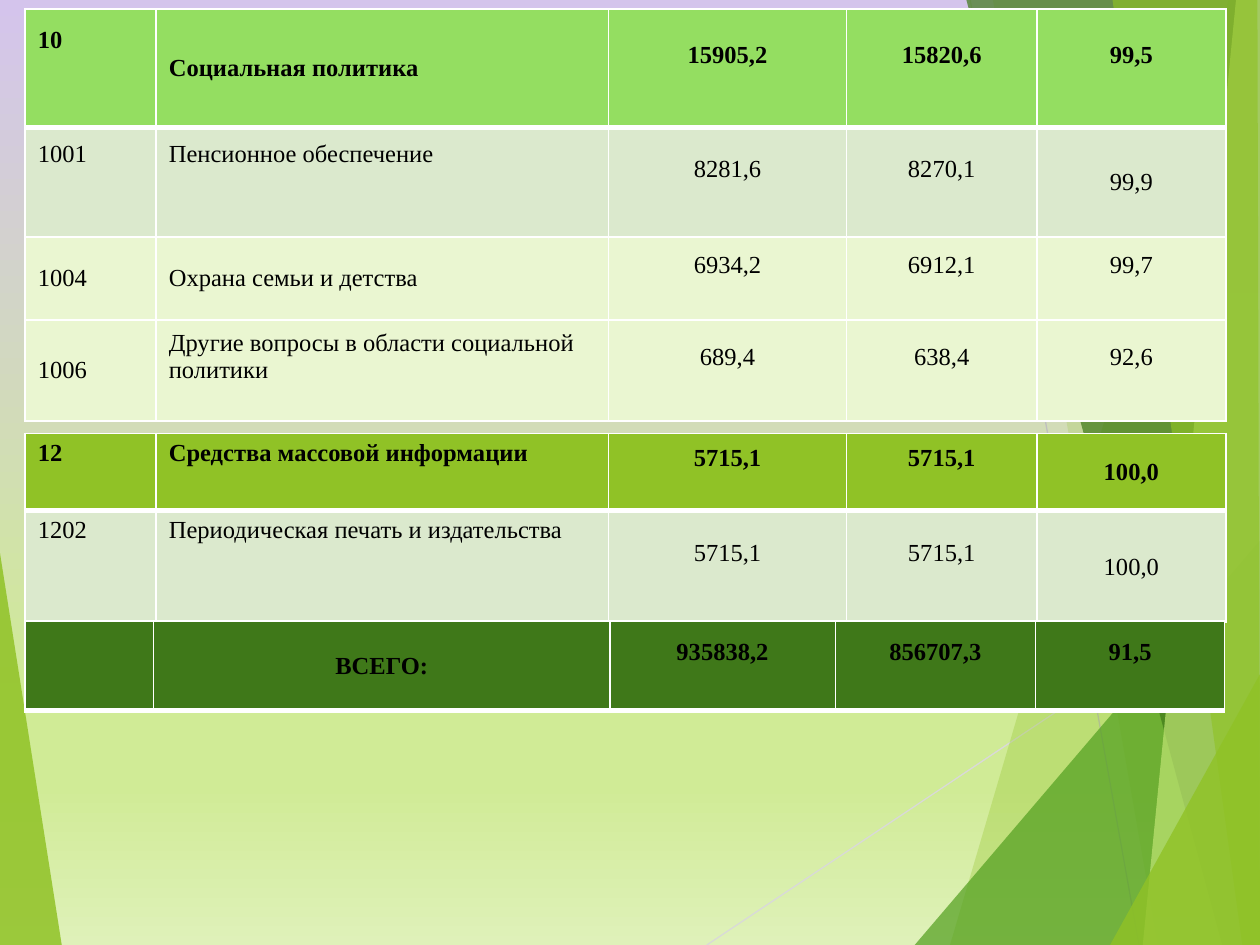
from lxml import etree
from pptx import Presentation
from pptx.dml.color import RGBColor
from pptx.enum.shapes import MSO_CONNECTOR as Connector
from pptx.enum.text import MSO_ANCHOR as Anchor, PP_ALIGN as Align
from pptx.oxml import parse_xml
from pptx.oxml.ns import nsdecls, qn
from pptx.util import Inches, Pt

FONT = "Times New Roman"
LINE_HEIGHT = 0.22
GREEN, DARK, LIME = "90C226", "3F7819", "94DE61"
SAGE, PALE = "DBE9CD", "EAF6D1"

BACKGROUND_STOPS = [(0, "D4C4EC"), (74, "D0EB96"), (83, "D0EB96"), (100, "DFF1B9")]
LEFT_WEDGE = ([(0, 4.39), (0.49, 7.5), (0, 7.5)], GREEN, 85)
RAYS = [((5.61, 7.5), (10, 4.57), "D9D9D9"), ((7.7, 0), (9.04, 7.5), "BFBFBF")]
FACETS = [
    ([(9.75, 0), (7.54, 7.5), (10, 7.5), (10, 0)], GREEN, 30),
    ([(7.88, 0), (9.19, 7.5), (10, 7.5), (10, 0)], GREEN, 20),
    ([(7.26, 7.5), (10, 4.29), (10, 7.5)], "54A021", 72),
    ([(7.67, 0), (9.7, 7.5), (10, 7.5), (10, 0)], DARK, 70),
    ([(9.81, 0), (9.07, 7.5), (10, 7.5), (10, 0)], "C0E474", 70),
    ([(8.83, 0), (9.86, 7.5), (10, 7.5), (9.98, 0)], GREEN, 65),
    ([(8.81, 7.5), (10, 5.35), (10, 7.5)], GREEN, 80),
]

# Each row: height, fill, bold, texts, lines of space kept below each text
SOCIAL_ROWS = [
    (0.94, LIME, True, ["10", "Социальная политика", "15905,2", "15820,6", "99,5"], [2, 0, 1, 1, 1]),
    (0.87, SAGE, False, ["1001", "Пенсионное обеспечение", "8281,6", "8270,1", "99,9"], [2, 2, 1, 1, 0]),
    (0.66, PALE, False, ["1004", "Охрана семьи и детства", "6934,2", "6912,1", "99,7"], [0, 0, 1, 1, 1]),
    (0.8, PALE, False, ["1006", "Другие вопросы в области социальной политики",
                        "689,4", "638,4", "92,6"], [0, 1, 1, 1, 1]),
]
MEDIA_ROWS = [
    (0.61, GREEN, True, ["12", "Средства массовой информации", "5715,1", "5715,1", "100,0"],
     [None, None, 1, 1, 0]),
    (0.89, SAGE, False, ["1202", "Периодическая печать и издательства", "5715,1", "5715,1", "100,0"],
     [None, None, 1, 1, 0]),
]
TOTAL_ROWS = [
    (0.71, DARK, True, ["", "ВСЕГО:", "935838,2", "856707,3", "91,5"], [0, 0, 1, 1, 1]),
]
WIDTHS = [1.04, 3.59, 1.89, 1.51, 1.5]
TOTAL_WIDTHS = [1.02, 3.62, 1.79, 1.59, 1.5]


def color(value):
    return RGBColor.from_string(value)


def paint_background(page):
    page.background.fill.gradient()
    gradient = page.background._cSld.find(".//" + qn("a:gradFill"))
    stops = "".join(
        f'<a:gs pos="{pos * 1000}"><a:srgbClr val="{value}"/></a:gs>'
        for pos, value in BACKGROUND_STOPS
    )
    gradient.getparent().replace(gradient, parse_xml(
        f'<a:gradFill {nsdecls("a")} rotWithShape="1"><a:gsLst>{stops}</a:gsLst>'
        '<a:lin ang="5400000" scaled="0"/></a:gradFill>'
    ))


def add_facet(page, points, fill, opacity):
    start, *rest = [(Inches(x), Inches(y)) for x, y in points]
    builder = page.shapes.build_freeform(*start)
    builder.add_line_segments(rest, close=True)
    facet = builder.convert_to_shape()
    facet.shadow.inherit = False
    facet.fill.solid()
    facet.fill.fore_color.rgb = color(fill)
    tone = facet._element.spPr.find(qn("a:solidFill"))[0]
    etree.SubElement(tone, qn("a:alpha")).set("val", str(opacity * 1000))
    facet.line.fill.background()


def add_ray(page, start, end, tone):
    ray = page.shapes.add_connector(
        Connector.STRAIGHT, *[Inches(value) for value in (*start, *end)]
    )
    ray.line.color.rgb = color(tone)
    ray.line.width = Pt(0.75)
    etree.SubElement(ray._element.spPr, qn("a:effectLst"))


def set_borders(cell, top, bottom):
    properties = cell._tc.get_or_add_tcPr()
    edges = [("lnL", 1), ("lnR", 1), ("lnT", top), ("lnB", bottom)]
    for index, (edge, width) in enumerate(edges):
        properties.insert(index, parse_xml(
            f'<a:{edge} {nsdecls("a")} w="{Pt(width)}"><a:solidFill>'
            f'<a:srgbClr val="FFFFFF"/></a:solidFill></a:{edge}>'
        ))


def fill_cell(cell, text, fill, bold, lines_below, numeric, centered):
    cell.fill.solid()
    cell.fill.fore_color.rgb = color(fill)
    cell.vertical_anchor = Anchor.TOP if lines_below is None else Anchor.MIDDLE
    cell.margin_left = cell.margin_right = Inches(0.01 if numeric else 0.1)
    cell.margin_top = Inches(0.01 if numeric else 0.05)
    cell.margin_bottom = Inches((0 if numeric else 0.05) + (lines_below or 0) * LINE_HEIGHT)
    cell.text_frame.text = text
    para = cell.text_frame.paragraphs[0]
    para.alignment = Align.CENTER if centered else Align.LEFT
    for span in para.runs:
        span.font.name = FONT
        span.font.size = Pt(14)
        span.font.bold = bold
        span.font.color.rgb = color("000000")


def add_budget_table(page, top, widths, rows, center_names=False):
    height = sum(row[0] for row in rows)
    frame = page.shapes.add_table(
        len(rows), len(widths), Inches(0.2), Inches(top), Inches(sum(widths)), Inches(height)
    )
    table = frame.table
    for column, width in zip(table.columns, widths):
        column.width = Inches(width)
    for r, (row_height, fill, bold, texts, spaces) in enumerate(rows):
        table.rows[r].height = Inches(row_height)
        for c, (text, lines_below) in enumerate(zip(texts, spaces)):
            cell = table.cell(r, c)
            numeric = c > 1
            fill_cell(cell, text, fill, bold, lines_below, numeric, numeric or center_names)
            set_borders(cell, 3 if r == 1 else 1, 3 if r == 0 else 1)


def main():
    deck = Presentation()
    deck.slide_width, deck.slide_height = Inches(10), Inches(7.5)
    page = deck.slides.add_slide(deck.slide_layouts[6])
    paint_background(page)
    add_facet(page, *LEFT_WEDGE)
    for ray in RAYS:
        add_ray(page, *ray)
    for facet in FACETS:
        add_facet(page, *facet)
    add_budget_table(page, 0.07, WIDTHS, SOCIAL_ROWS)
    add_budget_table(page, 3.44, WIDTHS, MEDIA_ROWS)
    add_budget_table(page, 4.93, TOTAL_WIDTHS, TOTAL_ROWS, center_names=True)
    deck.save("out.pptx")


if __name__ == "__main__":
    main()
